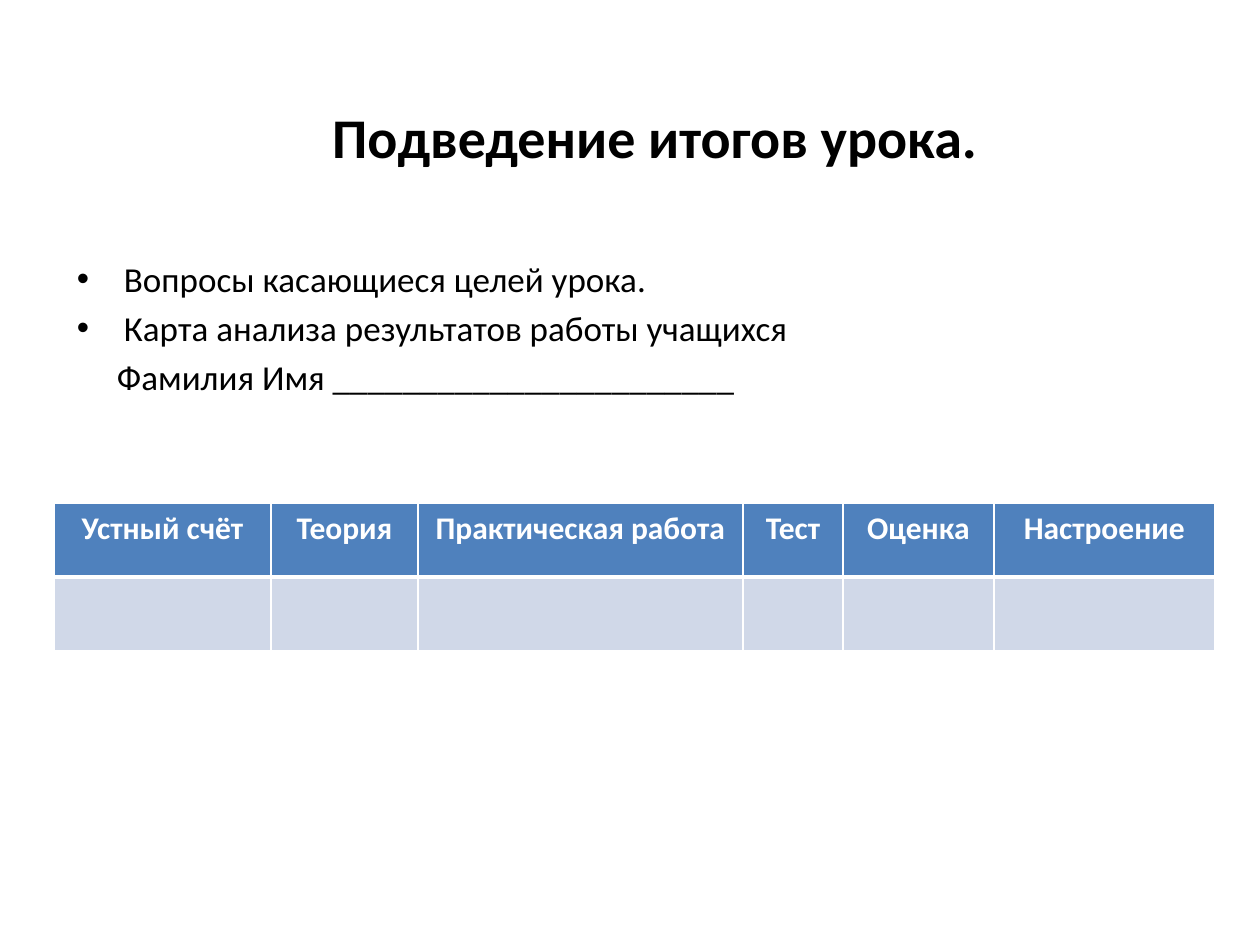
from pptx import Presentation
from pptx.dml.color import RGBColor
from pptx.enum.text import MSO_ANCHOR, MSO_AUTO_SIZE, PP_ALIGN
from pptx.oxml.ns import qn
from pptx.util import Pt
from lxml.etree import SubElement

SCALE = 914400 / 126


def px(n):
    return round(n * SCALE)


def color(code):
    return RGBColor.from_string(code)


class Page:
    font = "Calibri"
    ink, white = "000000", "FFFFFF"
    head, band = "4F81BD", "D0D8E8"

    def __init__(self, deck):
        self.slide = deck.slides.add_slide(deck.slide_layouts[1])

    def label(self, para, text, size, ink, bold=False):
        run = para.add_run()
        run.text = text
        font = run.font
        font.name, font.size, font.bold = self.font, Pt(size), bold
        font.color.rgb = color(ink)

    def place(self, shape, box):
        shape.left, shape.top, shape.width, shape.height = map(px, box)
        frame = shape.text_frame
        frame.word_wrap = True
        frame.auto_size = MSO_AUTO_SIZE.NONE
        frame.vertical_anchor = MSO_ANCHOR.TOP
        frame.margin_left = frame.margin_right = 0
        frame.margin_top = frame.margin_bottom = 0
        return frame

    def title(self, text, box):
        para = self.place(self.slide.shapes.title, box).paragraphs[0]
        para.alignment = PP_ALIGN.CENTER
        self.label(para, text, 32, self.ink, True)

    def body(self, items, box):
        frame = self.place(self.slide.placeholders[1], box)
        for i, (text, bullet) in enumerate(items):
            para = frame.add_paragraph() if i else frame.paragraphs[0]
            props = para._p.get_or_add_pPr()
            props.set("marL", str(px(47 if bullet else 40)))
            props.set("indent", str(px(-47) if bullet else 0))
            if bullet:
                SubElement(props, qn("a:buFont")).set("typeface", "Arial")
                SubElement(props, qn("a:buChar")).set("char", "•")
            else:
                SubElement(props, qn("a:buNone"))
            para.space_before = Pt(4 if i else 0)
            self.label(para, text, 20, self.ink)

    def border(self, cell, side, width):
        line = SubElement(cell._tc.get_or_add_tcPr(), qn(f"a:ln{side}"))
        line.set("w", str(Pt(width)))
        fill = SubElement(line, qn("a:solidFill"))
        SubElement(fill, qn("a:srgbClr")).set("val", self.white)

    def table(self, heads, widths, left, top, high):
        rows = 2
        table = self.slide.shapes.add_table(
            rows, len(heads), px(left), px(top),
            px(sum(widths)), px(rows * high)).table
        for row in table.rows:
            row.height = px(high)
        for col, (text, width) in enumerate(zip(heads, widths)):
            table.columns[col].width = px(width)
            for row in range(rows):
                cell = table.cell(row, col)
                # The thick rule lies between header and answers
                thick = "T" if row else "B"
                for side in "LRTB":
                    self.border(cell, side, 3 if side == thick else 1)
                cell.fill.solid()
                cell.fill.fore_color.rgb = color(self.band if row else self.head)
            para = table.cell(0, col).text_frame.paragraphs[0]
            para.alignment = PP_ALIGN.CENTER
            self.label(para, text, 18, self.white, True)


def main():
    deck = Presentation()
    deck.slide_width, deck.slide_height = px(1260), px(945)
    page = Page(deck)

    # Heading
    page.title("Подведение итогов урока.", (90, 103, 1130, 70))

    # Questions and name line
    page.body([
        ("Вопросы касающиеся целей урока.", True),
        ("Карта анализа результатов работы учащихся", True),
        ("Фамилия Имя _______________________", False),
    ], (77, 257, 1107, 160))

    # Result card
    page.table(
        ["Устный счёт", "Теория", "Практическая работа",
         "Тест", "Оценка", "Настроение"],
        [217, 147, 325, 100, 151, 221], 54, 503, 74)

    deck.save("out.pptx")


if __name__ == "__main__":
    main()
